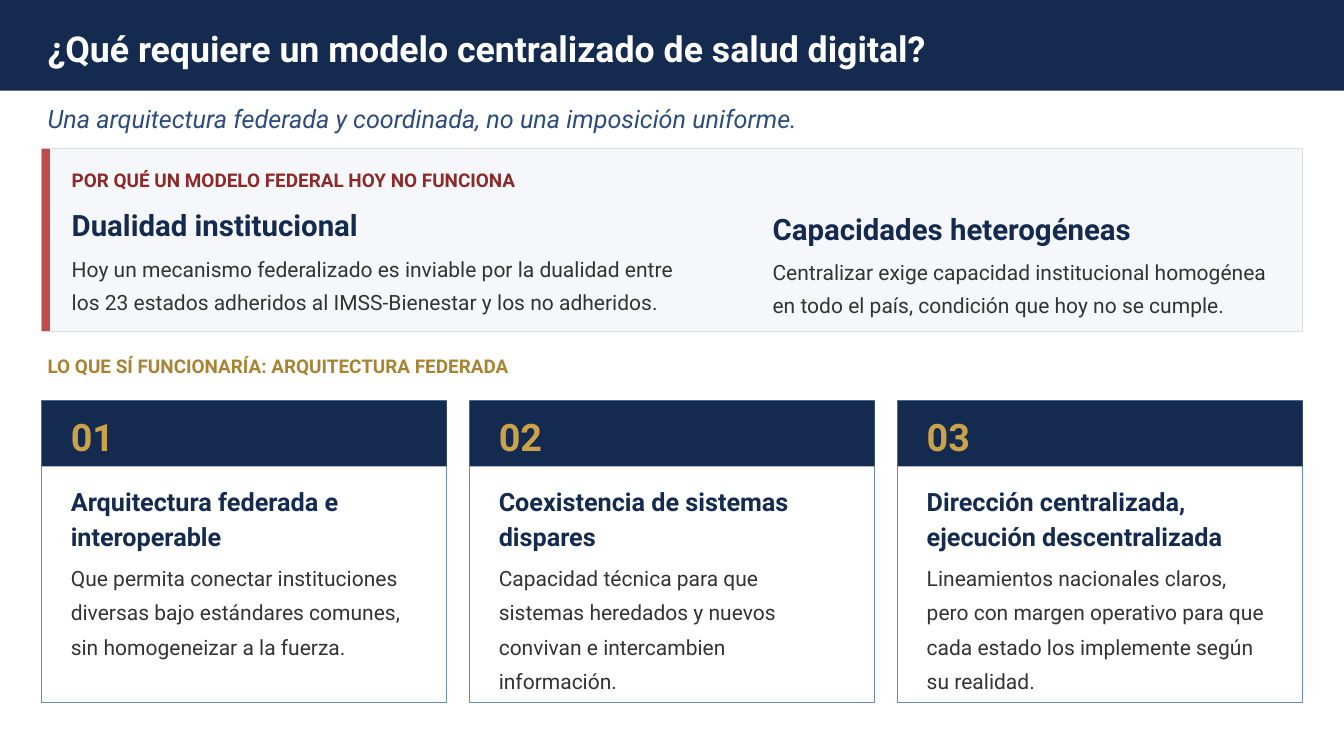
from pptx import Presentation
from pptx.dml.color import RGBColor
from pptx.enum.shapes import MSO_SHAPE
from pptx.enum.text import MSO_ANCHOR, MSO_AUTO_SIZE, PP_ALIGN
from pptx.util import Cm, Pt

NAVY = RGBColor(0x14, 0x2A, 0x4F)
BLUE = RGBColor(0x2C, 0x4C, 0x7C)
CARD_EDGE = RGBColor(0x6B, 0x8C, 0xB8)
PANEL_FILL = RGBColor(0xF6, 0xF7, 0xFA)
PANEL_EDGE = RGBColor(0xD8, 0xDC, 0xE3)
RED = RGBColor(0xC0, 0x4B, 0x4B)
DARK_RED = RGBColor(0x8C, 0x2A, 0x2A)
GOLD = RGBColor(0xC9, 0xA2, 0x4A)
DARK_GOLD = RGBColor(0xA8, 0x83, 0x33)
GREY = RGBColor(0x33, 0x33, 0x33)
WHITE = RGBColor(0xFF, 0xFF, 0xFF)

# Each style holds font values and paragraph values.
TITLE = ({"size": Pt(34), "bold": True}, WHITE, {})
SUBTITLE = ({"size": Pt(24), "italic": True}, BLUE, {})
PROBLEM_LABEL = ({"size": Pt(18), "bold": True}, DARK_RED, {})
SOLUTION_LABEL = ({"size": Pt(18), "bold": True}, DARK_GOLD, {})
REASON_HEADING = ({"size": Pt(28), "bold": True}, NAVY, {})
REASON_BODY = ({"size": Pt(20)}, GREY, {"line_spacing": 1.3, "space_before": Pt(6)})
CARD_NUMBER = ({"size": Pt(36), "bold": True}, GOLD, {})
CARD_HEADING = ({"size": Pt(24), "bold": True}, NAVY, {"line_spacing": 1.15})
CARD_BODY = ({"size": Pt(20)}, GREY, {"line_spacing": 1.35})

FRAME = {
    "word_wrap": True,
    "auto_size": MSO_AUTO_SIZE.SHAPE_TO_FIT_TEXT,
    "margin_left": Cm(0.2),
    "margin_right": Cm(0.2),
    "margin_top": Cm(0.1),
    "margin_bottom": Cm(0.1),
}

prs = Presentation()
prs.slide_width, prs.slide_height = Cm(45.16), Cm(25.4)
slide = prs.slides.add_slide(prs.slide_layouts[5])
shapes = slide.shapes


def add_block(left, top, width, height, fill, edge=None):
    block = shapes.add_shape(MSO_SHAPE.RECTANGLE, Cm(left), Cm(top), Cm(width), Cm(height))
    block.shadow.inherit = False
    block.fill.solid()
    block.fill.fore_color.rgb = fill
    if edge is None:
        block.line.fill.background()
    else:
        block.line.color.rgb = edge
        block.line.width = Pt(0.75)


def write(box, bounds, lines, anchor=MSO_ANCHOR.TOP):
    """Place a text box or placeholder and fill it with (text, style) paragraphs."""
    box.left, box.top, box.width, box.height = [Cm(value) for value in bounds]
    frame = box.text_frame
    for name, value in FRAME.items():
        setattr(frame, name, value)
    frame.vertical_anchor = anchor
    for index, (text, (font, color, spacing)) in enumerate(lines):
        paragraph = frame.add_paragraph() if index else frame.paragraphs[0]
        paragraph.text = text
        paragraph.alignment = PP_ALIGN.LEFT
        for name, value in spacing.items():
            setattr(paragraph, name, value)
        for run in paragraph.runs:
            run.font.name = "Roboto"
            run.font.color.rgb = color
            for name, value in font.items():
                setattr(run.font, name, value)


MARGIN = 1.4
CONTENT_WIDTH = 42.37

# Title band, with the title brought in front of it
add_block(0, 0, 45.16, 3.05, NAVY)
title = shapes.title
title.element.getparent().append(title.element)
write(title, (MARGIN, 0.51, CONTENT_WIDTH, 2.21),
      [("¿Qué requiere un modelo centralizado de salud digital?", TITLE)], MSO_ANCHOR.MIDDLE)

# Problem panel
PANEL_TOP, PANEL_HEIGHT = 5, 6.12
add_block(MARGIN, PANEL_TOP, CONTENT_WIDTH, PANEL_HEIGHT, PANEL_FILL, PANEL_EDGE)
add_block(MARGIN, PANEL_TOP, 0.28, PANEL_HEIGHT, RED)

headlines = [
    ((MARGIN, 3.38, CONTENT_WIDTH, 1.22), SUBTITLE,
     "Una arquitectura federada y coordinada, no una imposición uniforme."),
    ((2.21, 5.56, 41.12, 0.97), PROBLEM_LABEL,
     "POR QUÉ UN MODELO FEDERAL HOY NO FUNCIONA"),
    ((MARGIN, 11.81, CONTENT_WIDTH, 0.97), SOLUTION_LABEL,
     "LO QUE SÍ FUNCIONARÍA: ARQUITECTURA FEDERADA"),
]
for bounds, style, text in headlines:
    write(shapes.add_textbox(0, 0, 0, 0), bounds, [(text, style)])

reasons = [
    ((2.21, 6.86, 21.62, 3.73), "Dualidad institucional",
     "Hoy un mecanismo federalizado es inviable por la dualidad entre los 23 estados "
     "adheridos al IMSS-Bienestar y los no adheridos."),
    ((25.76, 6.98, 17.73, 3.73), "Capacidades heterogéneas",
     "Centralizar exige capacidad institucional homogénea en todo el país, "
     "condición que hoy no se cumple."),
]
for bounds, heading, body in reasons:
    write(shapes.add_textbox(0, 0, 0, 0), bounds,
          [(heading, REASON_HEADING), (body, REASON_BODY)])

# Solution cards
CARD_TOP, CARD_GAP = 13.46, 0.77
cards = [
    ("Arquitectura federada e interoperable", 3.56,
     "Que permita conectar instituciones diversas bajo estándares comunes, "
     "sin homogeneizar a la fuerza."),
    ("Coexistencia de sistemas dispares", 4.7,
     "Capacidad técnica para que sistemas heredados y nuevos convivan e "
     "intercambien información."),
    ("Dirección centralizada,\nejecución descentralizada", 4.7,
     "Lineamientos nacionales claros, pero con margen operativo para que cada estado "
     "los implemente según su realidad."),
]
card_width = (CONTENT_WIDTH - CARD_GAP * (len(cards) - 1)) / len(cards)
for index, (heading, body_height, body) in enumerate(cards):
    left = MARGIN + index * (card_width + CARD_GAP)
    add_block(left, CARD_TOP, card_width, 10.13, WHITE, CARD_EDGE)
    add_block(left, CARD_TOP, card_width, 2.21, NAVY)
    rows = [
        (13.79, 1.75, f"{index + 1:02}", CARD_NUMBER, MSO_ANCHOR.MIDDLE),
        (16.1, 2.49, heading, CARD_HEADING, MSO_ANCHOR.TOP),
        (18.62, body_height, body, CARD_BODY, MSO_ANCHOR.TOP),
    ]
    for top, height, text, style, anchor in rows:
        write(shapes.add_textbox(0, 0, 0, 0), (left + 0.78, top, 12.04, height),
              [(text, style)], anchor)

prs.save("out.pptx")
